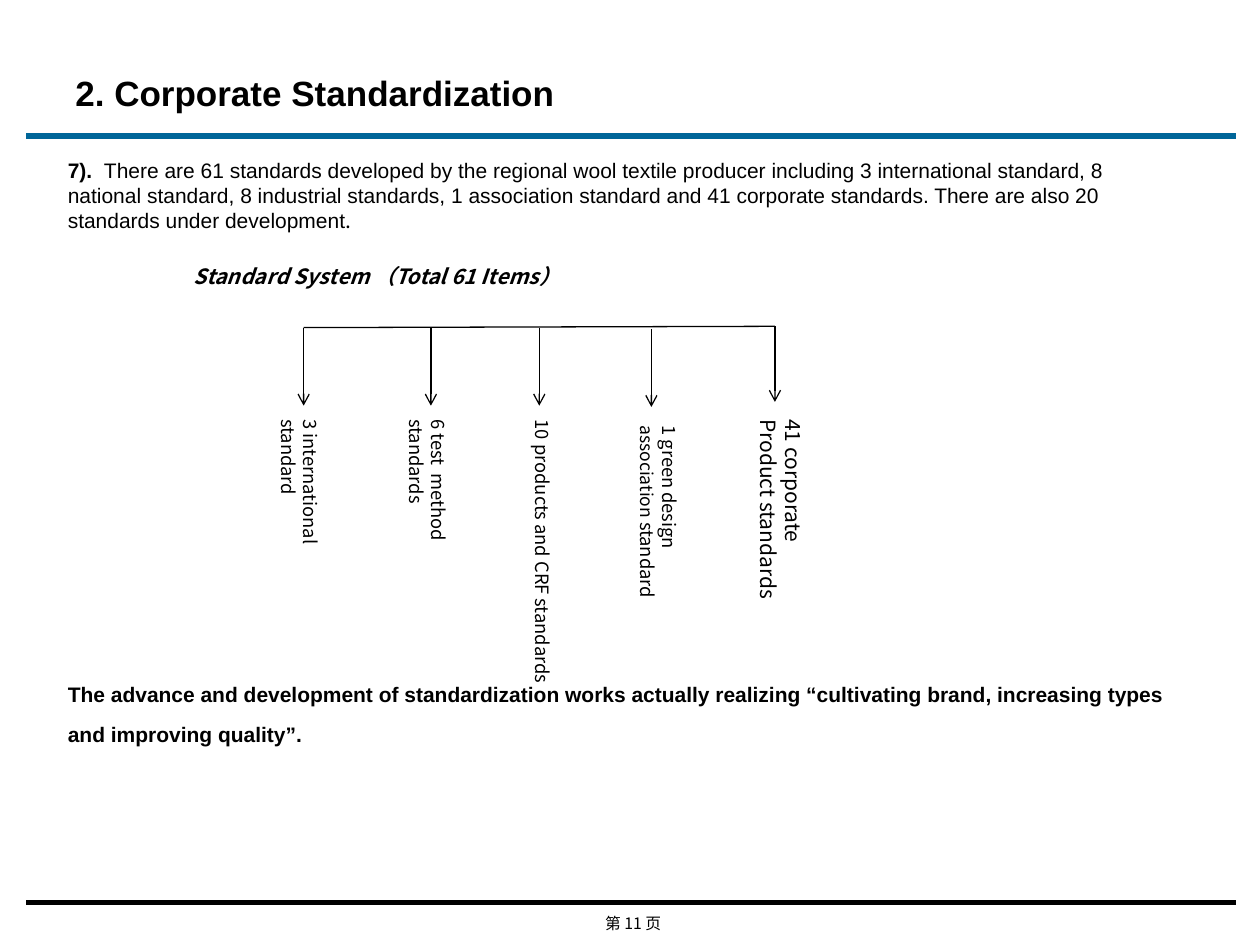
from lxml import etree
from pptx import Presentation
from pptx.dml.color import RGBColor
from pptx.enum.shapes import MSO_CONNECTOR
from pptx.enum.text import MSO_ANCHOR, PP_ALIGN
from pptx.oxml.ns import qn
from pptx.util import Inches, Pt

BLACK = RGBColor(0x00, 0x00, 0x00)
BLUE = RGBColor(0x00, 0x66, 0x99)
LATIN = "Arial"
HAN = "Noto Sans CJK SC"
LABEL = "Noto Sans CJK KR"
STRAIGHT = MSO_CONNECTOR.STRAIGHT
CENTER = PP_ALIGN.CENTER
LEFT = PP_ALIGN.LEFT
MIDDLE = MSO_ANCHOR.MIDDLE
TOP = MSO_ANCHOR.TOP


class SlideBuilder:
    def __init__(self, page):
        self.page = page

    def text(self, place, spans, size=12, font=LATIN, bold=False, italic=False,
             align=LEFT, anchor=TOP, spacing=1.0, vertical=False):
        box = self.page.shapes.add_textbox(*(Inches(length) for length in place))
        frame = box.text_frame
        frame.word_wrap = True
        frame.vertical_anchor = anchor
        if vertical:
            frame._txBody.bodyPr.set("vert", "eaVert")
        para = frame.paragraphs[0]
        para.alignment = align
        para.line_spacing = spacing
        para.font.size = Pt(size)
        para.font.name = font
        para.font.bold = bold
        para.font.italic = italic
        para.font.color.rgb = BLACK
        for words, changes in spans:
            span = para.add_run()
            span.text = words
            for name, value in changes.items():
                setattr(span.font, name, value)
        if font != LATIN:
            defaults = para._p.pPr.find(qn("a:defRPr"))
            etree.SubElement(defaults, qn("a:ea")).set("typeface", font)

    def line(self, start, end, color=BLACK, width=0.75, arrow=False):
        points = (Inches(length) for length in (*start, *end))
        connector = self.page.shapes.add_connector(STRAIGHT, *points)
        connector.line.color.rgb = color
        connector.line.width = Pt(width)
        if arrow:
            outline = connector.line._get_or_add_ln()
            etree.SubElement(outline, qn("a:tailEnd")).set("type", "arrow")
        etree.SubElement(connector._element.spPr, qn("a:effectLst"))


def main():
    deck = Presentation()
    deck.slide_width = Inches(10)
    deck.slide_height = Inches(7.5)
    builder = SlideBuilder(deck.slides.add_slide(deck.slide_layouts[6]))

    builder.text((4.44, 7.2, 1.17, 0.25), [("第 11 页", {})], size=9, font=HAN,
                 align=CENTER, anchor=MIDDLE)
    for height, color in ((7.16, BLACK), (1.08, BLUE)):
        builder.line((0.21, height), (9.81, height), color, 3)

    builder.text((0.5, 0.3, 9, 0.87), [("2. Corporate Standardization", {})],
                 size=20, bold=True, anchor=MIDDLE)
    builder.text((0.44, 1.2, 9, 0.75), [
        ("7).  ", {"bold": True}),
        ("There are 61 standards developed by the regional wool textile producer "
         "including 3 international standard, 8 national standard, 8 industrial "
         "standards, 1 association standard and 41 corporate standards. There are "
         "also 20 standards under development", {}),
        (".", {"name": HAN}),
    ])
    builder.text((1.44, 2.04, 4, 0.35),
                 [("Standard System （Total 61 Items）", {})],
                 font=HAN, bold=True, italic=True)
    builder.text((0.44, 5.24, 9, 0.75), [
        ("The advance and development of standardization works actually realizing "
         "“cultivating brand, increasing types and improving quality”.", {}),
    ], bold=True, spacing=1.6)

    builder.line((2.41, 2.6), (6.15, 2.59))
    branches = [
        (2.41, 2.6, 3.22, (2.22, 3.23, 0.38, 1.73), 10.5,
         [("3 international standard", {})]),
        (3.42, 2.6, 3.22, (3.24, 3.23, 0.38, 1.84), 10.5,
         [("6 test  method standards", {})]),
        (4.28, 2.6, 3.22, (4.07, 3.23, 0.4, 2.44), 10.5,
         [("10", {}), (" ", {"size": Pt(12), "name": HAN, "bold": True}),
          ("products and CRF standards", {})]),
        (5.17, 2.61, 3.23, (4.89, 3.28, 0.56, 1.73), 10.5,
         [("1 green design ", {}), ("association ", {"size": Pt(10)}),
          ("standard", {})]),
        (6.15, 2.59, 3.19, (5.84, 3.23, 0.61, 1.73), 12,
         [("41 corporate Product standards", {})]),
    ]
    for across, top, tip, place, size, spans in branches:
        builder.line((across, top), (across, tip), arrow=True)
        builder.text(place, spans, size=size, font=LABEL, vertical=True)

    deck.save("out.pptx")


if __name__ == "__main__":
    main()
